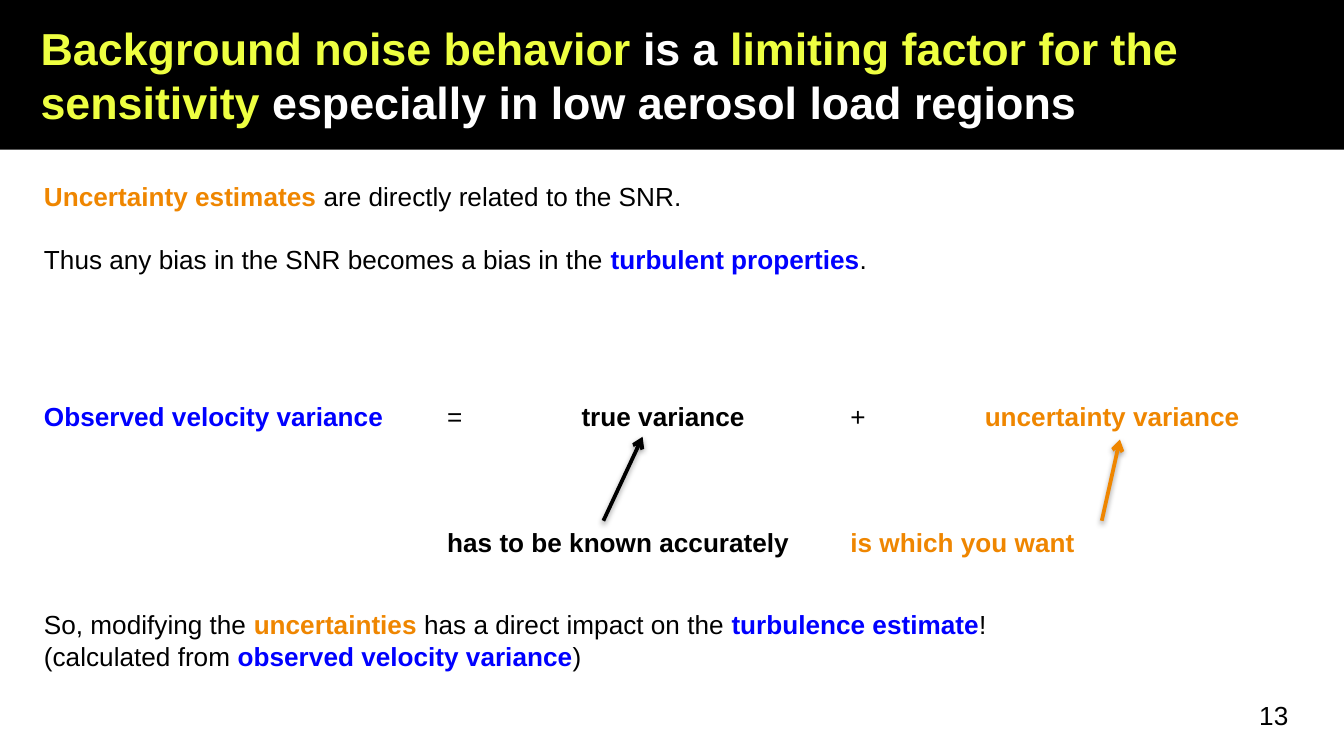
from lxml.etree import SubElement
from pptx import Presentation
from pptx.dml.color import RGBColor
from pptx.enum.shapes import MSO_CONNECTOR
from pptx.enum.text import MSO_ANCHOR, MSO_AUTO_SIZE, PP_ALIGN
from pptx.oxml.ns import qn
from pptx.util import Emu, Pt

BLACK, WHITE, YELLOW = "000000", "FFFFFF", "EEFF41"
ORANGE, BLUE = "EF8600", "0000FF"
LINE = 16.85
TABS = (288, 384, 576, 672)


def px(n):
    """Turn px into EMU at 96 to the inch."""
    return Emu(n * 9525)


def rgb(value):
    """Turn a hex string into a colour."""
    return RGBColor.from_string(value)


def place(sp, box):
    """Move and size a shape to the box."""
    sp.left, sp.top, sp.width, sp.height = map(px, box)


def add_runs(p, runs, size):
    """Add (text, colour, bold) runs to a paragraph."""
    for text, color, bold in runs:
        r = p.add_run()
        r.text = text
        r.font.name = "Arial"
        r.font.size = Pt(size)
        r.font.bold = bold
        r.font.color.rgb = rgb(color)


def add_tabs(p):
    """Set the equation's tab stops on a paragraph."""
    tabs = SubElement(p._p.get_or_add_pPr(), qn("a:tabLst"))
    for stop in TABS:
        SubElement(tabs, qn("a:tab"), pos=str(px(stop)), algn="l")


def add_title(s, box, runs):
    """Place the title on its dark band."""
    sp = s.shapes.title
    place(sp, box)
    sp.fill.solid()
    sp.fill.fore_color.rgb = rgb(BLACK)
    tf = sp.text_frame
    tf.word_wrap = True
    tf.auto_size = MSO_AUTO_SIZE.NONE
    tf.vertical_anchor = MSO_ANCHOR.MIDDLE
    tf.margin_left = px(29)
    p = tf.paragraphs[0]
    p.alignment = PP_ALIGN.LEFT
    add_runs(p, runs, 24)


def add_text(s, box, paragraphs):
    """Add a text box of (lines skipped before, runs) paragraphs."""
    tf = s.shapes.add_textbox(*map(px, box)).text_frame
    tf.word_wrap = True
    for i, (skipped, runs) in enumerate(paragraphs):
        p = tf.paragraphs[0] if i == 0 else tf.add_paragraph()
        p.line_spacing = Pt(LINE)
        if skipped:
            p.space_before = Pt(round(skipped * LINE, 2))
        if any("\t" in text for text, _, _ in runs):
            add_tabs(p)
        add_runs(p, runs, 14)
    return tf


def add_arrow(s, start, end, color):
    """Add an arrow with a soft shadow below it."""
    line = s.shapes.add_connector(MSO_CONNECTOR.STRAIGHT, *map(px, start + end))
    line.line.color.rgb = rgb(color)
    line.line.width = Pt(2)
    SubElement(line.line._get_or_add_ln(), qn("a:tailEnd"), type="arrow")
    effects = SubElement(line._element.spPr, qn("a:effectLst"))
    shadow = SubElement(effects, qn("a:outerShdw"), blurRad=str(Pt(3.1)),
                        dist=str(Pt(1.6)), dir="5400000", rotWithShape="0")
    clr = SubElement(shadow, qn("a:srgbClr"), val=BLACK)
    SubElement(clr, qn("a:alpha"), val="38000")


def add_equation(s, box):
    """Add the statements, the variance equation and its two arrows."""
    add_text(s, box, [
        (0, [("Uncertainty estimates ", ORANGE, True),
             ("are directly related to the SNR.", BLACK, False)]),
        (1, [("Thus any bias in the SNR becomes a bias in the ", BLACK, False),
             ("turbulent properties", BLUE, True), (".", BLACK, False)]),
        (4, [("Observed velocity variance\t", BLUE, True), ("=\t", BLACK, False),
             ("true variance\t", BLACK, True), ("+\t", BLACK, False),
             ("uncertainty variance", ORANGE, True)]),
        (3, [("\thas to be known accurately\t", BLACK, True),
             ("is which you want", ORANGE, True)]),
    ])
    left, top = box[:2]
    for x1, x2, y2, color in ((409, 437, 188, BLACK), (765, 778, 190, ORANGE)):
        add_arrow(s, (left + x1, top + 248), (left + x2, top + y2), color)


def add_conclusion(s, box):
    """Add the closing statement."""
    add_text(s, box, [
        (0, [("So, modifying the ", BLACK, False), ("uncertainties ", ORANGE, True),
             ("has a direct impact on the ", BLACK, False),
             ("turbulence estimate", BLUE, True), ("!", BLACK, False)]),
        (0, [("(calculated from ", BLACK, False),
             ("observed velocity variance", BLUE, True), (")", BLACK, False)]),
    ])


def add_page_number(s, box, number):
    """Add the page number."""
    tf = add_text(s, box, [(0, [(number, BLACK, False)])])
    tf.vertical_anchor = MSO_ANCHOR.MIDDLE


def main():
    """Build and save the slide."""
    prs = Presentation()
    prs.slide_width, prs.slide_height = px(960), px(540)
    s = prs.slides.add_slide(prs.slide_layouts[5])
    add_title(s, (0, 0, 960, 107), [
        ("Background noise behavior ", YELLOW, True), ("is a ", WHITE, True),
        ("limiting factor for the sensitivity", YELLOW, True),
        (" especially in low aerosol load regions", WHITE, True)])
    add_equation(s, (22, 124, 911, 281))
    add_conclusion(s, (22, 430, 911, 55))
    add_page_number(s, (890, 490, 58, 41), "13")
    prs.save("out.pptx")


if __name__ == "__main__":
    main()
